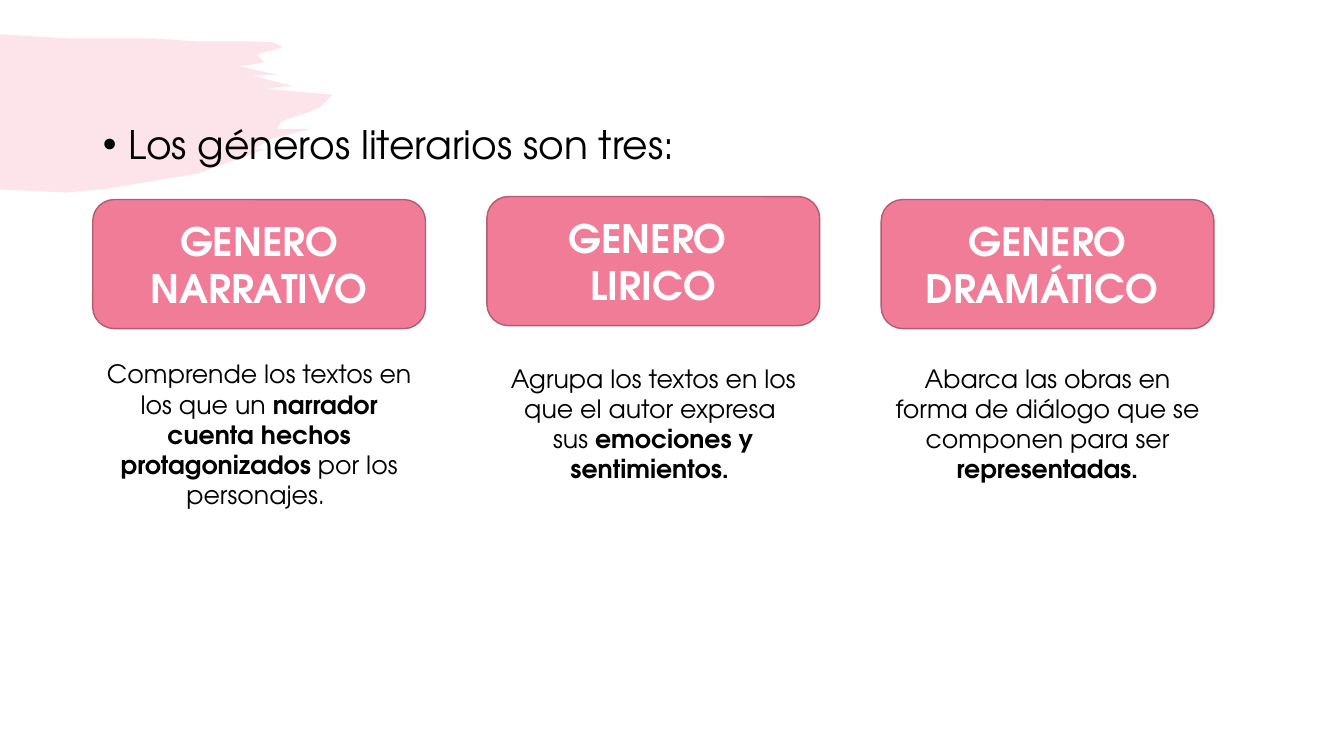
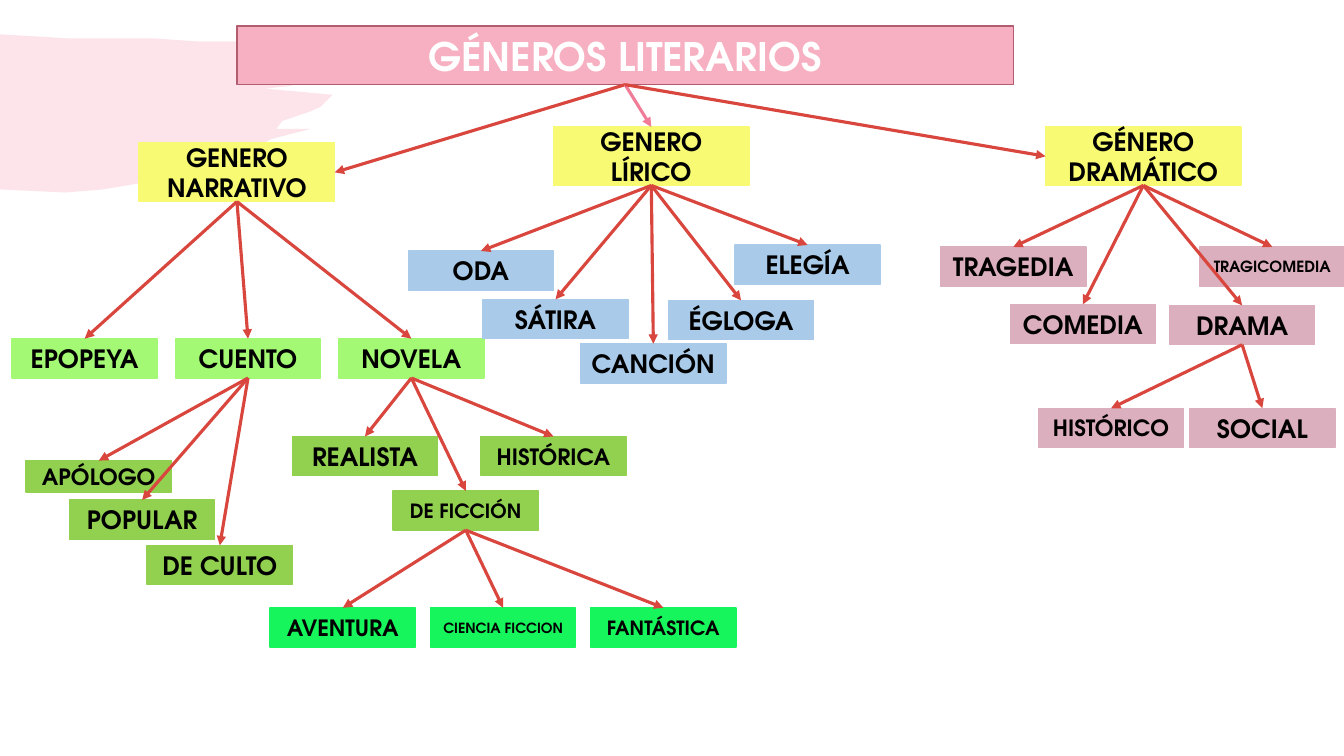
"""Build two slides on the literary genres."""
from dataclasses import dataclass

from lxml import etree
from pptx import Presentation
from pptx import util as u
from pptx.dml.color import RGBColor
from pptx.enum import shapes, text
from pptx.oxml.ns import qn

PX = 9144
FONT = "TeX Gyre Adventor"
WHITE = RGBColor.from_string("FFFFFF")
BLACK = RGBColor.from_string("000000")
PINK = RGBColor.from_string("F07C98")
PALE_PINK = RGBColor.from_string("F6B0C1")
PLUM = RGBColor.from_string("B25C70")
YELLOW = RGBColor.from_string("F7FA72")
LIME = RGBColor.from_string("A3F973")
OLIVE = RGBColor.from_string("92D050")
GREEN = RGBColor.from_string("17F55C")
BLUE = RGBColor.from_string("A9CBE9")
MAUVE = RGBColor.from_string("DCAFBE")
RED = RGBColor.from_string("D9463E")
TOP, LEFT, BOTTOM, RIGHT = range(4)

BRUSH = [
    (0, 34), (66, 38), (151, 38), (194, 41), (248, 41), (272, 42), (280, 47),
    (255, 54), (262, 62), (238, 66), (275, 74), (251, 75), (273, 81), (290, 85),
    (263, 88), (330, 94), (318, 106), (307, 111), (280, 120), (274, 128),
    (308, 128), (269, 138), (252, 148), (263, 148), (197, 172), (102, 188),
    (65, 191), (0, 188),
]

COLUMNS = [
    (198, ["GENERO NARRATIVO"], 351,
     [("Comprende los textos en los que un ", False),
      ("narrador cuenta hechos protagonizados ", True), ("por los personajes. ", False)]),
    (195, ["GENERO ", "LIRICO"], 355,
     [("Agrupa los textos en los que el autor expresa \nsus ", False),
      ("emociones y sentimientos. ", True)]),
    (198, ["GENERO DRAMÁTICO "], 355,
     [("Abarca las obras en forma de diálogo que se componen para ser ", False),
      ("representadas.", True)]),
]


@dataclass
class Node:
    """A box of the tree, placed by its offset from its parent."""
    label: str
    dx: int
    dy: int
    fill: RGBColor
    size: int = 18
    kids: tuple = ()
    width: int = 144
    height: int = 39
    side: int = TOP
    arrow: RGBColor = RED


def genre(label, dx, dy, kids, side=TOP, arrow=RED):
    """Return a genre node of the upper level."""
    return Node(label, dx, dy, YELLOW, 18, kids, 194, 58, side, arrow)


def row(items, dx, dy, step, fill):
    """Return evenly spaced nodes from label, size and children."""
    return tuple(Node(label, dx + step * index, dy, fill, size, kids)
                 for index, (label, size, kids) in enumerate(items))


FICTION = row([("AVENTURA", 16, ()), ("CIENCIA FICCION", 10, ()), ("FANTÁSTICA", 14, ())],
              -122, 116, 159, GREEN)
NOVELS = (
    Node("REALISTA", -46, 97, OLIVE),
    Node("DE FICCIÓN", 54, 151, OLIVE, 14, FICTION),
    Node("HISTÓRICA", 141, 97, OLIVE, 16),
)
TALES = (
    Node("APÓLOGO", -148, 121, OLIVE, 16, height=31),
    Node("POPULAR", -105, 160, OLIVE),
    Node("DE CULTO", -28, 205, OLIVE),
)
NARRATIVE = row([("EPOPEYA", 18, ()), ("CUENTO", 18, TALES), ("NOVELA", 18, NOVELS)],
                -126, 194, 162, LIME)
LYRIC = (
    Node("ODA", -144, 123, BLUE),
    Node("SÁTIRA", -70, 171, BLUE),
    Node("CANCIÓN", 27, 215, BLUE),
    Node("ÉGLOGA", 114, 172, BLUE),
    Node("ELEGÍA", 180, 117, BLUE),
)
DRAMAS = row([("HISTÓRICO", 16, ()), ("SOCIAL", 18, ())], -130, 102, 150, MAUVE)
DRAMATIC = (
    Node("TRAGEDIA", -104, 119, MAUVE),
    Node("COMEDIA", -35, 176, MAUVE),
    Node("DRAMA", 123, 177, MAUVE, kids=DRAMAS),
    Node("TRAGICOMEDIA", 153, 119, MAUVE, 11),
)
GENRES = (
    genre("GENERO NARRATIVO", -97, 116, NARRATIVE, RIGHT),
    genre("GENERO LÍRICO", 314, 100, LYRIC, arrow=PINK),
    genre("GÉNERO DRAMÁTICO", 802, 100, DRAMATIC, LEFT),
)


def emu(*lengths):
    """Turn px into EMU."""
    return [u.Emu(length * PX) for length in lengths]


def place(shape, box):
    """Move a placeholder to a box."""
    shape.left, shape.top, shape.width, shape.height = emu(*box)


def paint(shape, fill, line):
    """Give a shape its fill and outline."""
    shape.fill.solid()
    shape.fill.fore_color.rgb = fill
    shape.line.color.rgb = line
    shape.line.width = u.Pt(1)


def style(para, size, color, bold=None, align=text.PP_ALIGN.CENTER):
    """Set the font and alignment of a paragraph."""
    para.alignment = align
    para.font.name = FONT
    para.font.size = u.Pt(size)
    para.font.color.rgb = color
    para.font.bold = bold


def label_box(page, kind, box, lines, fill, outline, size, color):
    """Add a filled box with bold centred lines."""
    shape = page.shapes.add_shape(kind, *emu(*box))
    shape.shadow.inherit = False
    paint(shape, fill, outline)
    frame = shape.text_frame
    frame.text = "\n".join(lines)
    frame.vertical_anchor = text.MSO_ANCHOR.MIDDLE
    for para in frame.paragraphs:
        style(para, size, color, True)
    return shape


def description(page, box, spans):
    """Add a centred text with bold parts."""
    frame = page.shapes.add_textbox(*emu(*box)).text_frame
    frame.word_wrap = True
    para = frame.paragraphs[0]
    style(para, 18, BLACK)
    for words, bold in spans:
        for index, part in enumerate(words.split("\n")):
            if index:
                para.add_line_break()
            span = para.add_run()
            span.text = part
            span.font.bold = bold


def arrow(page, parent, start, child, end, color):
    """Join two boxes with an arrow."""
    line = page.shapes.add_connector(shapes.MSO_CONNECTOR.STRAIGHT, 0, 0, 0, 0)
    line.begin_connect(parent, start)
    line.end_connect(child, end)
    line.line.color.rgb = color
    line.line.width = u.Pt(2.25)
    etree.SubElement(line.get_or_add_ln(), qn("a:tailEnd"), type="triangle")
    etree.SubElement(line.element.spPr, qn("a:effectLst"))


def brush_on_master(deck, page):
    """Draw the pale brush stroke behind every slide."""
    builder = page.shapes.build_freeform(*BRUSH[0], scale=PX)
    builder.add_line_segments(BRUSH[1:])
    brush = builder.convert_to_shape()
    brush.shadow.inherit = False
    brush.fill.solid()
    brush.fill.fore_color.rgb = PINK
    brush.line.fill.background()
    color = next(brush.element.spPr.iter(qn("a:srgbClr")))
    etree.SubElement(color, qn("a:alpha"), val="20000")
    deck.slide_master.element.cSld.spTree.insert(2, brush.element)


def intro_slide(page, box):
    """Fill the slide with the three genres in columns."""
    left, top, width, height = box
    title = page.shapes.title.element
    title.getparent().remove(title)
    body = page.placeholders[1]
    place(body, (left, top, width, 66))
    frame = body.text_frame
    frame.text = "Los géneros literarios son tres:"
    frame.auto_size = text.MSO_AUTO_SIZE.NONE
    para = frame.paragraphs[0]
    style(para, 28, BLACK, align=text.PP_ALIGN.LEFT)
    para.space_before = u.Pt(0)
    props = para._p.get_or_add_pPr()
    props.set("marL", str(25 * PX))
    props.set("indent", str(-25 * PX))
    rounded = shapes.MSO_SHAPE.FLOWCHART_ALTERNATE_PROCESS
    for index, (head_top, lines, text_top, spans) in enumerate(COLUMNS):
        x = left + 391 * index
        label_box(page, rounded, (x, head_top, 330, 128), lines, PINK, PLUM, 28, WHITE)
        description(page, (x, text_top, 330, top + height - text_top), spans)


def branch(page, parent, x, y, nodes):
    """Place nodes below a parent and return their links."""
    links = []
    for node in nodes:
        left, top = x + node.dx, y + node.dy
        child = label_box(page, shapes.MSO_SHAPE.RECTANGLE, (left, top, node.width, node.height),
                          [node.label], node.fill, node.fill, node.size, BLACK)
        links.append((parent, BOTTOM, child, node.side, node.arrow))
        links += branch(page, child, left, top, node.kids)
    return links


def tree_slide(page, box):
    """Fill the slide with the tree that hangs from its title box."""
    title = page.shapes.title
    place(title, box)
    paint(title, PALE_PINK, PLUM)
    frame = title.text_frame
    frame.text = "GÉNEROS LITERARIOS"
    frame.auto_size = text.MSO_AUTO_SIZE.NONE
    frame.vertical_anchor = text.MSO_ANCHOR.MIDDLE
    style(frame.paragraphs[0], 28, WHITE, True)
    for link in branch(page, title, box[0], box[1], GENRES):
        arrow(page, *link)


def main():
    """Build and save the deck."""
    deck = Presentation()
    deck.slide_width, deck.slide_height = emu(1333, 750)
    intro = deck.slides.add_slide(deck.slide_layouts[1])
    brush_on_master(deck, intro)
    intro_slide(intro, (92, 114, 1150, 399))
    tree_slide(deck.slides.add_slide(deck.slide_layouts[5]), (235, 26, 770, 58))
    deck.save("out.pptx")


if __name__ == "__main__":
    main()
